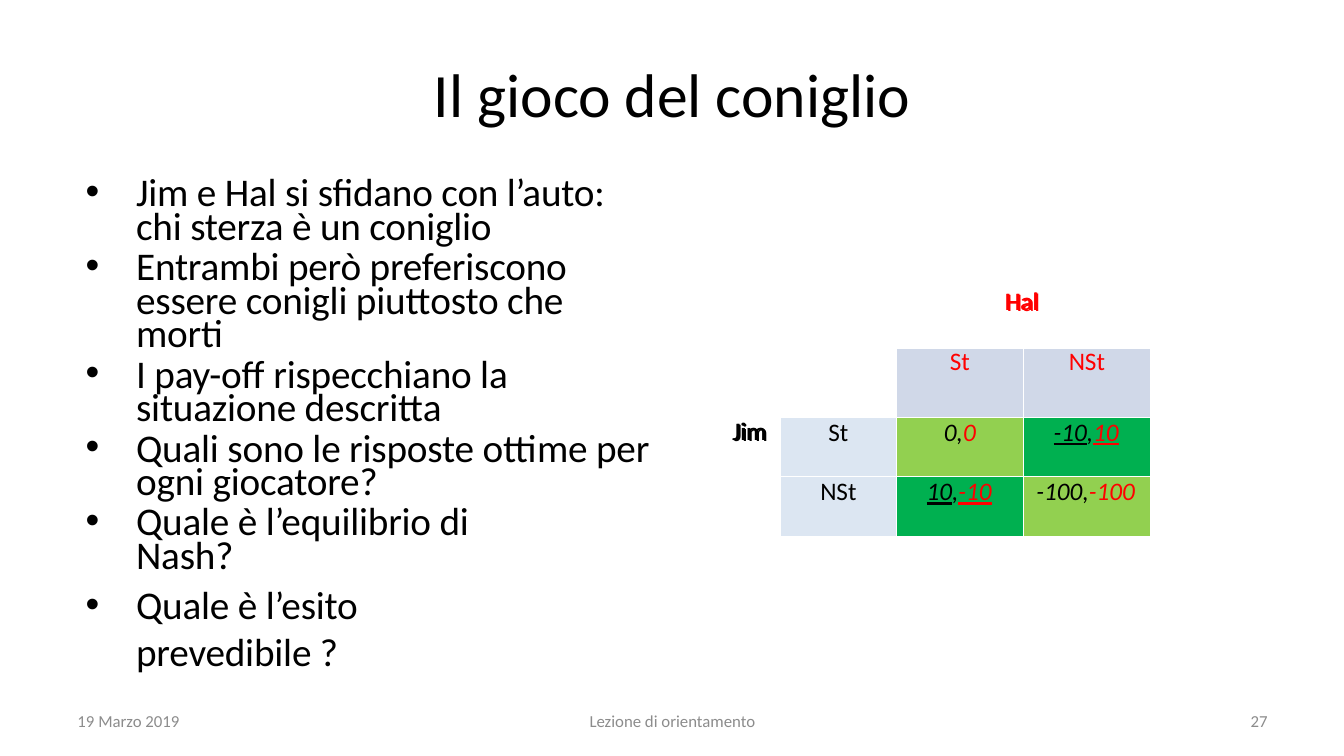
"""Build the slide on the game of chicken, with its payoff matrix."""
import pptx
import pptx.dml.color
import pptx.enum.text
import pptx.oxml.ns
import pptx.util
from lxml import etree
from pptx.util import Inches

BLACK = pptx.dml.color.RGBColor(0x00, 0x00, 0x00)
RED = pptx.dml.color.RGBColor(0xFF, 0x00, 0x00)
GREY = pptx.dml.color.RGBColor(0x8C, 0x8C, 0x8C)
WHITE = pptx.dml.color.RGBColor(0xFF, 0xFF, 0xFF)
HAL_HEADER = pptx.dml.color.RGBColor(0xD0, 0xD8, 0xE8)
JIM_HEADER = pptx.dml.color.RGBColor(0xDC, 0xE6, 0xF2)
PAYOFF = pptx.dml.color.RGBColor(0x92, 0xD0, 0x50)
EQUILIBRIUM = pptx.dml.color.RGBColor(0x00, 0xB0, 0x50)

ALIGN = pptx.enum.text.PP_ALIGN
ANCHOR = pptx.enum.text.MSO_ANCHOR

QUESTIONS = [
    ("Jim e Hal si sfidano con l’auto: chi sterza è un coniglio", 5.8, 23.8, 0),
    ("Entrambi però preferiscono essere conigli piuttosto che morti", 5.2, 23.8, 0),
    ("I pay-off rispecchiano la situazione descritta", 5.2, 23.8, 0.5),
    ("Quali sono le risposte ottime per ogni giocatore?", 5.2, 23.8, 0),
    ("Quale è l’equilibrio di Nash?", 5.2, 23.8, 1.3),
    ("Quale è l’esito prevedibile ?", 2.2, None, 2),
]
PAYOFFS = [
    (2, 2, "0", "0", None),
    (2, 3, "-10", "10", 0.3),
    (3, 2, "10", "-10", 0.3),
    (3, 3, "-100", "-100", 0.13),
]
BEST_REPLIES = [(2, 3), (3, 2)]
MATRIX_STAGES = [
    (6.82, 2.84, False, PAYOFF),
    (6.83, 2.84, True, PAYOFF),
    (6.84, 2.85, True, EQUILIBRIUM),
]
COLUMN_WIDTHS = [0.9, 1.15, 1.26, 1.26]
ROW_HEIGHTS = [0.59, 0.7, 0.59, 0.59]
FOOTERS = [
    ("19 Marzo 2019", 0.67, 3.11, ALIGN.LEFT),
    ("Lezione di orientamento", 4.56, 4.22, ALIGN.CENTER),
    ("27", 9.56, 3.11, ALIGN.RIGHT),
]


def write(paragraph, text, size=18, color=BLACK, italic=False, underline=False, spacing=0):
    """Add a formatted run of text to a paragraph."""
    run = paragraph.add_run()
    run.text = text
    run.font.name = "Calibri"
    run.font.size = pptx.util.Pt(size)
    run.font.color.rgb = color
    run.font.italic = italic
    run.font.underline = underline
    run.font.bold = False
    if spacing:
        run.font._element.set("spc", str(round(spacing * 100)))


def place(shape, left, top, width, height):
    """Move and size a shape, in inches."""
    shape.left, shape.top = Inches(left), Inches(top)
    shape.width, shape.height = Inches(width), Inches(height)


def add_title(slide, text):
    """Fill the title placeholder."""
    title = slide.shapes.title
    place(title, 0.67, 0.3, 12, 1.25)
    title.text_frame.vertical_anchor = ANCHOR.MIDDLE
    heading = title.text_frame.paragraphs[0]
    heading.alignment = ALIGN.CENTER
    write(heading, text, size=44)


def add_questions(slide):
    """Fill the body placeholder with the bulleted list."""
    body = slide.placeholders[1]
    place(body, 0.67, 1.75, 5.89, 4.95)
    frame = body.text_frame
    frame.auto_size = pptx.enum.text.MSO_AUTO_SIZE.NONE
    for index, (text, before, leading, right_margin) in enumerate(QUESTIONS):
        question = frame.add_paragraph() if index else frame.paragraphs[0]
        question.space_before = pptx.util.Pt(before)
        if leading:
            question.line_spacing = pptx.util.Pt(leading)
        properties = question._p.get_or_add_pPr()
        properties.set("marL", str(Inches(0.58)))
        properties.set("marR", str(Inches(right_margin)))
        properties.set("indent", str(Inches(-0.5)))
        bullet = etree.SubElement(properties, pptx.oxml.ns.qn("a:buChar"))
        bullet.set("char", "•")
        write(question, text, size=28, spacing=-0.15)


def draw_borders(cell, row):
    """Outline a cell in white, with a thick rule under the top row."""
    properties = cell._tc.get_or_add_tcPr()
    for side in "LRTB":
        thick = (row, side) in [(0, "B"), (1, "T")]
        border = etree.SubElement(properties, pptx.oxml.ns.qn(f"a:ln{side}"))
        border.set("w", str(pptx.util.Pt(3 if thick else 1)))
        fill = etree.SubElement(border, pptx.oxml.ns.qn("a:solidFill"))
        etree.SubElement(fill, pptx.oxml.ns.qn("a:srgbClr")).set("val", str(WHITE))


def prepare_cell(cell, row):
    """Clear a cell's margins and fill, and outline it."""
    cell.margin_left = cell.margin_right = cell.margin_top = cell.margin_bottom = 0
    draw_borders(cell, row)
    cell.fill.background()


def format_cell(cell, fill=None, indent=None):
    """Fill a cell and return its paragraph, centred unless indented."""
    if fill is not None:
        cell.fill.solid()
        cell.fill.fore_color.rgb = fill
    entry = cell.text_frame.paragraphs[0]
    if indent is None:
        entry.alignment = ALIGN.CENTER
    else:
        entry._p.get_or_add_pPr().set("marL", str(Inches(indent)))
    return entry


def add_matrix(slide, left, top, underlined, reply_fill):
    """Add one stage of the payoff matrix."""
    matrix = slide.shapes.add_table(
        len(ROW_HEIGHTS), len(COLUMN_WIDTHS), Inches(left), Inches(top),
        Inches(sum(COLUMN_WIDTHS)), Inches(sum(ROW_HEIGHTS))).table
    matrix.first_row = matrix.horz_banding = False
    for column, width in zip(matrix.columns, COLUMN_WIDTHS):
        column.width = Inches(width)
    for index, height in enumerate(ROW_HEIGHTS):
        matrix.rows[index].height = Inches(height)
        for cell in matrix.rows[index].cells:
            prepare_cell(cell, index)
    matrix.cell(0, 2).merge(matrix.cell(0, 3))
    matrix.cell(2, 0).merge(matrix.cell(3, 0))
    write(format_cell(matrix.cell(0, 2)), "Hal", color=RED)
    write(format_cell(matrix.cell(2, 0), indent=0.44), "Jim")
    for offset, move in enumerate(["St", "NSt"]):
        write(format_cell(matrix.cell(1, 2 + offset), HAL_HEADER), move, color=RED)
        write(format_cell(matrix.cell(2 + offset, 1), JIM_HEADER), move)
    for row, column, jim, hal, indent in PAYOFFS:
        best = (row, column) in BEST_REPLIES
        entry = format_cell(matrix.cell(row, column), reply_fill if best else PAYOFF, indent)
        write(entry, jim, italic=True, underline=best and underlined)
        write(entry, ",", italic=True, spacing=-0.1)
        write(entry, hal, color=RED, italic=True, underline=best and underlined)


def add_footer(slide, text, left, width, alignment):
    """Add one grey text at the foot of the slide."""
    footer = slide.shapes.add_textbox(Inches(left), Inches(6.95), Inches(width), Inches(0.4))
    footer.text_frame.word_wrap = True
    footer.text_frame.vertical_anchor = ANCHOR.MIDDLE
    note = footer.text_frame.paragraphs[0]
    note.alignment = alignment
    write(note, text, size=12, color=GREY)


def main():
    """Build and save the slide."""
    presentation = pptx.Presentation()
    presentation.slide_width = Inches(13.33)
    presentation.slide_height = Inches(7.5)
    slide = presentation.slides.add_slide(presentation.slide_layouts[1])
    add_title(slide, "Il gioco del coniglio")
    add_questions(slide)
    for stage in MATRIX_STAGES:
        add_matrix(slide, *stage)
    for footer in FOOTERS:
        add_footer(slide, *footer)
    presentation.save("out.pptx")


if __name__ == "__main__":
    main()
